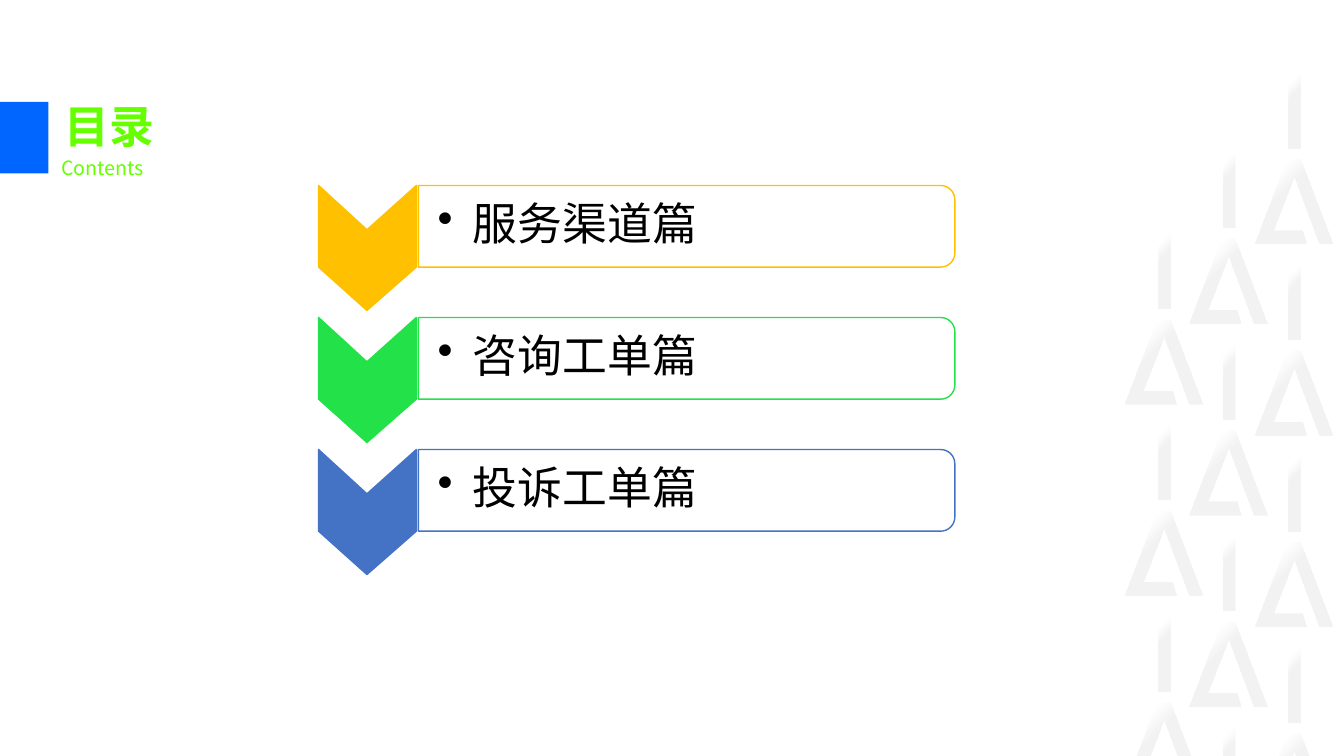
from math import cos, pi, sin

from lxml.etree import SubElement
from pptx import Presentation
from pptx.dml.color import RGBColor
from pptx.enum.shapes import MSO_SHAPE
from pptx.enum.text import MSO_ANCHOR, MSO_AUTO_SIZE, PP_ALIGN
from pptx.oxml.ns import qn
from pptx.util import Pt

PX = 9144  # EMU in one px, 100 px to the inch
SLIDE_WIDTH, SLIDE_HEIGHT = 1333, 750
FONT = "Noto Sans CJK SC"

BLUE = RGBColor(0x00, 0x66, 0xFF)
LIME = RGBColor(0x66, 0xFF, 0x00)
AMBER = RGBColor(0xFF, 0xC0, 0x00)
GREEN = RGBColor(0x23, 0xE1, 0x48)
INDIGO = RGBColor(0x44, 0x72, 0xC4)
BLACK = RGBColor(0x00, 0x00, 0x00)
WHITE = RGBColor(0xFF, 0xFF, 0xFF)
PALE = RGBColor(0xF2, 0xF2, 0xF2)

CHAPTERS = (("服务渠道篇", AMBER), ("咨询工单篇", GREEN), ("投诉工单篇", INDIGO))
CHAPTER_TOP, CHAPTER_PITCH = 184, 131

# Left edge and first bar of each column of the background pattern
PATTERN_COLUMNS = ((1116, 222), (1180, 142), (1245, 63))
PATTERN_PITCH = 95
FADE = ((0, WHITE), (20, WHITE), (40, PALE), (100, PALE))
TRIANGLE = ((45, 0), (32, 0), (0, 84), (51, 84), (47, 71),
            (18, 71), (39, 17), (64, 84), (77, 84))
CHEVRON = ((97, 0), (97, 81), (48, 124), (0, 81), (0, 0), (48, 44))


def emu(*lengths):
    return [round(length * PX) for length in lengths]


def add_rectangle(shapes, left, top, width, height):
    rectangle = shapes.add_shape(MSO_SHAPE.RECTANGLE, *emu(left, top, width, height))
    rectangle.shadow.inherit = False
    rectangle.line.fill.background()
    return rectangle


def add_outline(shapes, left, top, points):
    corners = [emu(left + x, top + y) for x, y in points]
    builder = shapes.build_freeform(*corners[0], scale=1.0)
    builder.add_line_segments(corners[1:], close=True)
    outline = builder.convert_to_shape()
    outline.shadow.inherit = False
    outline.line.fill.background()
    return outline


def paint(shape, fill, line):
    shape.fill.solid()
    shape.fill.fore_color.rgb = fill
    shape.line.color.rgb = line
    shape.line.width = Pt(1)


def fade(shape):
    shape.fill.gradient()
    shape.fill.gradient_angle = 315
    stops = shape._element.spPr.find(".//" + qn("a:gsLst"))
    for stop in list(stops):
        stops.remove(stop)
    for position, color in FADE:
        stop = SubElement(stops, qn("a:gs"), pos=str(position * 1000))
        SubElement(stop, qn("a:srgbClr"), val=str(color))


def write_text(frame, text, *, size, color, bold=False, wrap=False,
               anchor=MSO_ANCHOR.TOP, spacing=1.0, bullet_indent=0):
    frame.word_wrap = wrap
    frame.vertical_anchor = anchor
    frame.auto_size = MSO_AUTO_SIZE.NONE if wrap else MSO_AUTO_SIZE.SHAPE_TO_FIT_TEXT
    paragraph = frame.paragraphs[0]
    paragraph.alignment = PP_ALIGN.LEFT
    paragraph.line_spacing = spacing
    if bullet_indent:
        properties = paragraph._p.get_or_add_pPr()
        indent = emu(bullet_indent)[0]
        properties.set("marL", str(indent))
        properties.set("indent", str(-indent))
        SubElement(properties, qn("a:buChar"), char="•")
    run = paragraph.add_run()
    run.text = text
    run.font.size = Pt(size)
    run.font.bold = bold
    run.font.color.rgb = color
    run.font.name = FONT
    SubElement(run._r.get_or_add_rPr(), qn("a:ea"), typeface=FONT)


def add_pattern(shapes):
    pattern = shapes.add_group_shape().shapes
    for left, first_top in PATTERN_COLUMNS:
        for index, top in enumerate(range(first_top, SLIDE_HEIGHT, PATTERN_PITCH)):
            if index % 2:
                fade(add_outline(pattern, left, top, TRIANGLE))
            else:
                fade(add_rectangle(pattern, left + 33, top, 12, 84))


def rounded_right(width, height, radius, steps=8):
    """Corner points of a box whose two right corners are round."""
    angles = [pi / 2 * step / steps for step in range(steps + 1)]
    upper = [(width - radius + radius * sin(a), radius - radius * cos(a)) for a in angles]
    lower = [(x, height - y) for x, y in reversed(upper)]
    return [(0, 0), *upper, *lower, (0, height)]


def add_chapter(shapes, top, name, color):
    chevron = add_outline(shapes, 316, top, CHEVRON)
    paint(chevron, color, color)

    box = add_outline(shapes, 415, top, rounded_right(532, 81, 14))
    paint(box, WHITE, color)
    white = box._element.spPr.find(qn("a:solidFill")).find(qn("a:srgbClr"))
    SubElement(white, qn("a:alpha"), val="90000")
    frame = box.text_frame
    frame.margin_left, frame.margin_top, frame.margin_right, frame.margin_bottom = emu(19, 6, 6, 6)
    write_text(frame, name, size=32, color=BLACK, wrap=True,
               anchor=MSO_ANCHOR.MIDDLE, spacing=0.9, bullet_indent=35)


def add_heading(slide):
    marker = add_rectangle(slide.shapes, 0, 101, 48, 71)
    marker.fill.solid()
    marker.fill.fore_color.rgb = BLUE

    title = slide.shapes.title
    title.left, title.top, title.width, title.height = emu(54, 93, 110, 64)
    write_text(title.text_frame, "目录", size=32, color=LIME, bold=True)

    subtitle = slide.shapes.add_textbox(*emu(51, 150, 105, 34))
    write_text(subtitle.text_frame, "Contents", size=14, color=LIME)


def main():
    deck = Presentation()
    deck.slide_width, deck.slide_height = emu(SLIDE_WIDTH, SLIDE_HEIGHT)
    slide = deck.slides.add_slide(deck.slide_layouts[5])

    # Background pattern
    add_pattern(slide.shapes)

    # Heading
    add_heading(slide)

    # Chapters
    for index, (name, color) in enumerate(CHAPTERS):
        add_chapter(slide.shapes, CHAPTER_TOP + index * CHAPTER_PITCH, name, color)

    deck.save("out.pptx")


if __name__ == "__main__":
    main()
